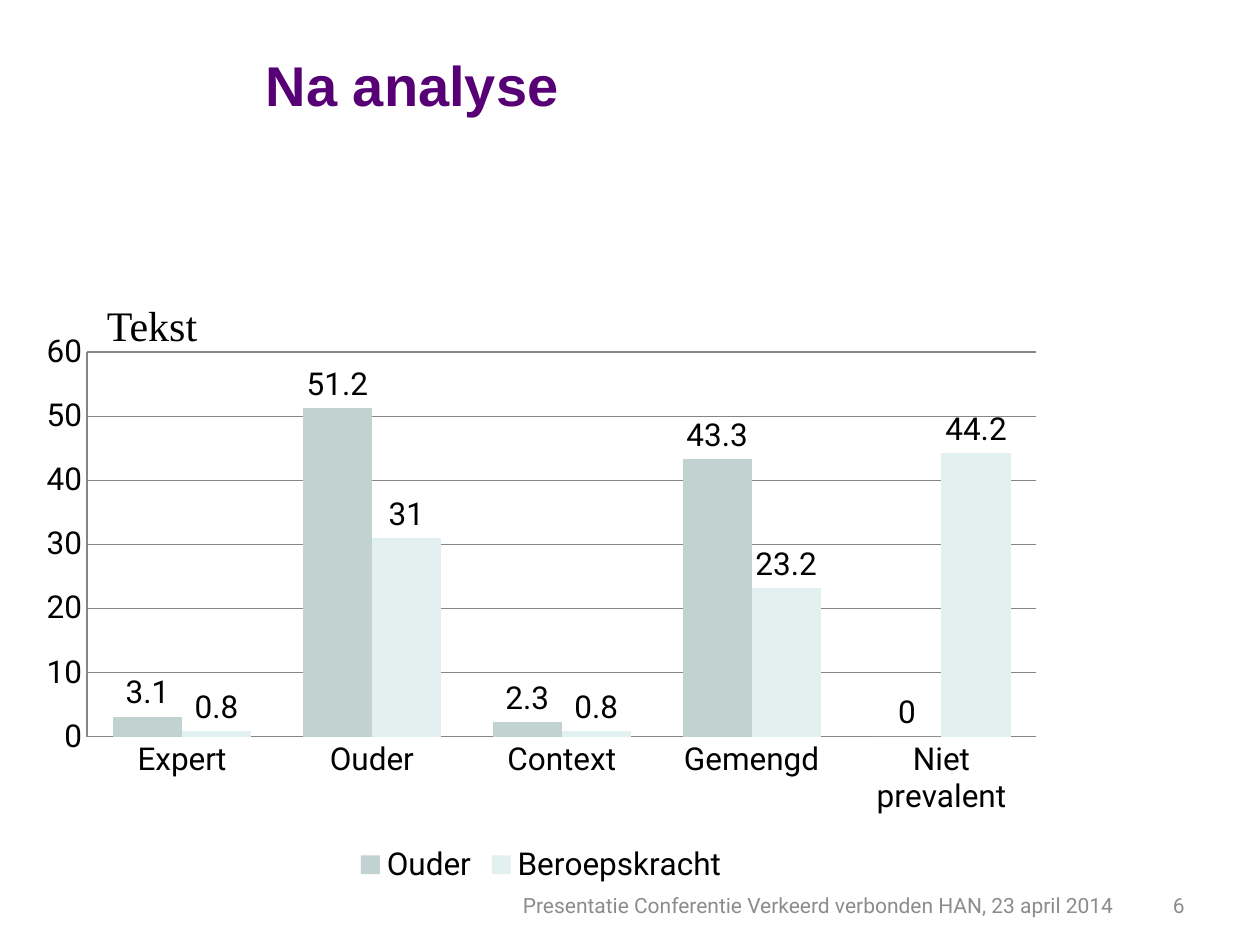
from dataclasses import dataclass

from lxml import etree
from pptx import Presentation
from pptx import util as u
from pptx.chart.data import CategoryChartData
from pptx.dml.color import RGBColor
from pptx.enum import chart as ch, text
from pptx.oxml.ns import qn

BLACK = RGBColor(0, 0, 0)
PURPLE = RGBColor(0x57, 0x00, 0x76)
GREY = RGBColor(0x8C, 0x8C, 0x8C)
LINE = RGBColor(0x86, 0x86, 0x86)
SAGE = RGBColor(0xC1, 0xD2, 0xD1)
MINT = RGBColor(0xE2, 0xF0, 0xF0)


@dataclass
class Label:
    words: str
    box: tuple[float, float, float, float]
    font: dict
    align: text.PP_ALIGN = text.PP_ALIGN.LEFT
    anchor: text.MSO_ANCHOR = text.MSO_ANCHOR.MIDDLE


@dataclass
class Series:
    name: str
    values: tuple[float, ...]
    color: RGBColor


SMALL = {"name": "Roboto", "size": u.Pt(12), "color": GREY}
TITLE = Label("Na analyse", (2.01, 0.29, 7.5, 0.75),
              {"name": "Arial", "size": u.Pt(32), "bold": True, "color": PURPLE})
LABELS = [
    Label("Presentatie Conferentie Verkeerd verbonden HAN, 23 april 2014",
          (2.01, 6.98, 6.93, 0.4), SMALL, text.PP_ALIGN.RIGHT),
    Label("6", (8.94, 6.98, 0.56, 0.4), SMALL, text.PP_ALIGN.RIGHT),
    Label("Tekst", (0.75, 2.33, 8.5, 0.91),
          {"name": "Times New Roman", "size": u.Pt(24), "color": BLACK},
          anchor=text.MSO_ANCHOR.TOP),
]
GROUPS = ("Expert", "Ouder", "Context", "Gemengd", "Niet prevalent")
SERIES = [
    Series("Ouder", (3.1, 51.2, 2.3, 43.3, 0), SAGE),
    Series("Beroepskracht", (0.8, 31, 0.8, 23.2, 44.2), MINT),
]
CHART_BOX = (0.2, 2.57, 8.19, 4.49)
PLOT = {"x": 0.06, "y": 0.05, "w": 0.92, "h": 0.68}


def style(font, values: dict) -> None:
    for key, value in values.items():
        if key == "color":
            font.color.rgb = value
        else:
            setattr(font, key, value)


def fill_text(shape, label: Label) -> None:
    shape.left, shape.top, shape.width, shape.height = map(u.Inches, label.box)
    frame = shape.text_frame
    frame.word_wrap = True
    frame.vertical_anchor = label.anchor
    frame.text = label.words
    para = frame.paragraphs[0]
    para.alignment = label.align
    style(para.runs[0].font, label.font)


def place_plot(chart) -> None:
    """Fix the inner plot area as fractions of the chart."""
    area = chart.plots[0]._element.getparent()
    for old in area.findall(qn("c:layout")):
        area.remove(old)
    layout = etree.Element(qn("c:layout"))
    manual = etree.SubElement(layout, qn("c:manualLayout"))
    parts = {"layoutTarget": "inner", "xMode": "edge", "yMode": "edge", **PLOT}
    for tag, value in parts.items():
        etree.SubElement(manual, qn(f"c:{tag}")).set("val", str(value))
    area.insert(0, layout)


def add_bars(slide) -> None:
    data = CategoryChartData()
    data.categories = GROUPS
    for item in SERIES:
        data.add_series(item.name, item.values)
    chart = slide.shapes.add_chart(ch.XL_CHART_TYPE.COLUMN_CLUSTERED,
                                   *map(u.Inches, CHART_BOX), data).chart
    style(chart.font, {"name": "Roboto", "size": u.Pt(18), "color": BLACK})
    chart.has_title = False
    chart.has_legend = True
    chart.legend.position = ch.XL_LEGEND_POSITION.BOTTOM
    chart.legend.include_in_layout = False

    plot = chart.plots[0]
    plot.gap_width, plot.overlap = 75, 0
    plot.vary_by_categories = False
    for bars, item in zip(plot.series, SERIES):
        bars.format.fill.solid()
        bars.format.fill.fore_color.rgb = item.color
        tags = bars.data_labels
        tags.show_value = True
        tags.position = ch.XL_LABEL_POSITION.OUTSIDE_END

    scale = chart.value_axis
    scale.minimum_scale, scale.maximum_scale, scale.major_unit = 0, 60, 10
    scale.has_major_gridlines = True
    for axis in (chart.category_axis, scale):
        axis.major_tick_mark = axis.minor_tick_mark = ch.XL_TICK_MARK.NONE
    for part in (chart.category_axis, scale, scale.major_gridlines):
        part.format.line.color.rgb = LINE
        part.format.line.width = u.Pt(0.75)
    place_plot(chart)


def main() -> None:
    deck = Presentation()
    deck.slide_width, deck.slide_height = u.Inches(10), u.Inches(7.5)
    slide = deck.slides.add_slide(deck.slide_layouts[5])
    fill_text(slide.shapes.title, TITLE)
    for label in LABELS:
        fill_text(slide.shapes.add_textbox(0, 0, 0, 0), label)
    add_bars(slide)
    deck.save("out.pptx")


if __name__ == "__main__":
    main()
